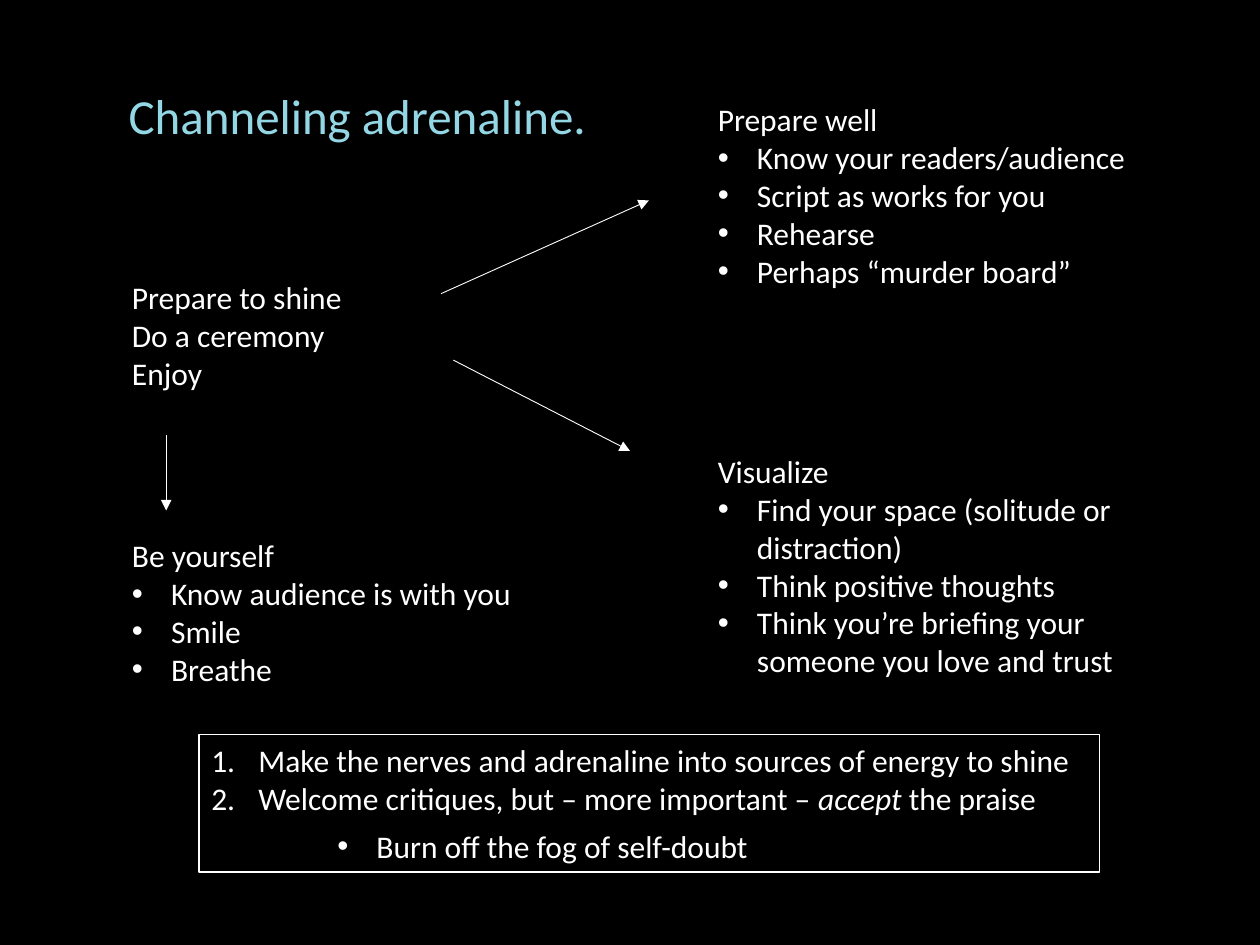
from dataclasses import dataclass

from lxml.etree import SubElement
from pptx import Presentation
from pptx.dml.color import RGBColor
from pptx.enum.shapes import MSO_CONNECTOR, MSO_SHAPE
from pptx.enum.text import MSO_ANCHOR, PP_ALIGN
from pptx.oxml.ns import qn
from pptx.util import Cm, Pt

FONT = "Calibri"
WHITE = "FFFFFF"


@dataclass
class Item:
    text: str  # words between asterisks are italic
    mark: str = ""  # "•" for a bullet, "1." for a number
    left: float = 0
    hang: float = 0
    level: int = 0
    gap: float = 0


@dataclass
class Block:
    x: float
    y: float
    w: float
    h: float
    items: list[Item]


@dataclass
class Arrow:
    x1: float
    y1: float
    x2: float
    y2: float


def rgb(code: str) -> RGBColor:
    return RGBColor.from_string(code)


def topic(head: str, *points: str) -> list[Item]:
    """A heading with bullets under it."""
    return [Item(head)] + [Item(p, "•", 0.79, 0.79) for p in points]


def style(run, size: float, color: str) -> None:
    run.font.name = FONT
    run.font.size = Pt(size)
    run.font.color.rgb = rgb(color)


def add_mark(para, item: Item) -> None:
    props = para._p.get_or_add_pPr()
    props.set("marL", str(Cm(item.left)))
    props.set("indent", str(-Cm(item.hang)))
    if item.mark == "•":
        SubElement(props, qn("a:buFont")).set("typeface", "Arial")
        SubElement(props, qn("a:buChar")).set("char", item.mark)
    else:
        SubElement(props, qn("a:buAutoNum")).set("type", "arabicPeriod")


def fill_text(shape, items: list[Item]) -> None:
    frame = shape.text_frame
    frame.word_wrap = True
    frame.vertical_anchor = MSO_ANCHOR.TOP
    for i, item in enumerate(items):
        para = frame.add_paragraph() if i else frame.paragraphs[0]
        para.alignment = PP_ALIGN.LEFT
        para.level = item.level
        if item.mark:
            add_mark(para, item)
        if item.gap:
            para.space_before = Pt(item.gap)
        for n, part in enumerate(item.text.split("*")):
            run = para.add_run()
            run.text = part
            style(run, 18, WHITE)
            if n % 2:
                run.font.italic = True


def add_block(slide, b: Block) -> None:
    box = slide.shapes.add_textbox(Cm(b.x), Cm(b.y), Cm(b.w), Cm(b.h))
    fill_text(box, b.items)


def add_frame(slide, b: Block) -> None:
    box = slide.shapes.add_shape(
        MSO_SHAPE.RECTANGLE, Cm(b.x), Cm(b.y), Cm(b.w), Cm(b.h))
    box.shadow.inherit = False
    box.fill.background()
    box.line.color.rgb = rgb(WHITE)
    box.line.width = Pt(0.75)
    fill_text(box, b.items)


def add_arrow(slide, a: Arrow) -> None:
    line = slide.shapes.add_connector(
        MSO_CONNECTOR.STRAIGHT, Cm(a.x1), Cm(a.y1), Cm(a.x2), Cm(a.y2))
    line.line.color.rgb = rgb(WHITE)
    line.line.width = Pt(0.5)
    SubElement(line.line._get_or_add_ln(), qn("a:tailEnd")).set("type", "triangle")
    SubElement(line._element.spPr, qn("a:effectLst"))


def add_title(slide, text: str) -> None:
    title = slide.shapes.title
    title.left, title.top = Cm(2.34), Cm(1.73)
    title.width, title.height = Cm(20.24), Cm(1.73)
    frame = title.text_frame
    frame.text = text
    frame.word_wrap = True
    frame.vertical_anchor = MSO_ANCHOR.TOP
    para = frame.paragraphs[0]
    para.alignment = PP_ALIGN.LEFT
    para.line_spacing = 0.9
    style(para.runs[0], 28, "94D7E4")


BLOCKS = [
    Block(2.41, 5.49, 4.83, 2.57, [
        Item("Prepare to shine"), Item("Do a ceremony"), Item("Enjoy")]),
    Block(14.22, 1.9, 8.86, 4.11, topic(
        "Prepare well", "Know your readers/audience",
        "Script as works for you", "Rehearse", "Perhaps “murder board”")),
    Block(14.22, 8.99, 9.75, 4.88, topic(
        "Visualize", "Find your space (solitude or distraction)",
        "Think positive thoughts",
        "Think you’re briefing your someone you love and trust")),
    Block(2.41, 10.69, 9.55, 4.11, topic(
        "Be yourself", "Know audience is with you", "Smile", "Breathe")),
]
ARROWS = [
    Arrow(8.89, 5.92, 13.08, 4.04),
    Arrow(9.14, 7.26, 12.7, 9.09),
    Arrow(3.35, 8.76, 3.35, 10.29),
]
ADVICE = Block(4.01, 14.81, 18.16, 2.77, [
    Item("Make the nerves and adrenaline into sources of energy to shine",
         "1.", 0.95, 0.95),
    Item("Welcome critiques, but – more important – *accept* the praise",
         "1.", 0.95, 0.95),
    Item("Burn off the fog of self-doubt", "•", 3.33, 0.79, level=2, gap=6),
])


def main() -> None:
    deck = Presentation()
    deck.slide_width, deck.slide_height = Cm(25.4), Cm(19.05)
    slide = deck.slides.add_slide(deck.slide_layouts[5])
    back = slide.background.fill
    back.solid()
    back.fore_color.rgb = rgb("000000")

    # Title, topics and the arrows between them
    add_title(slide, "Channeling adrenaline.")
    for block in BLOCKS:
        add_block(slide, block)
    for arrow in ARROWS:
        add_arrow(slide, arrow)

    # Framed advice at the foot
    add_frame(slide, ADVICE)
    deck.save("out.pptx")


if __name__ == "__main__":
    main()
